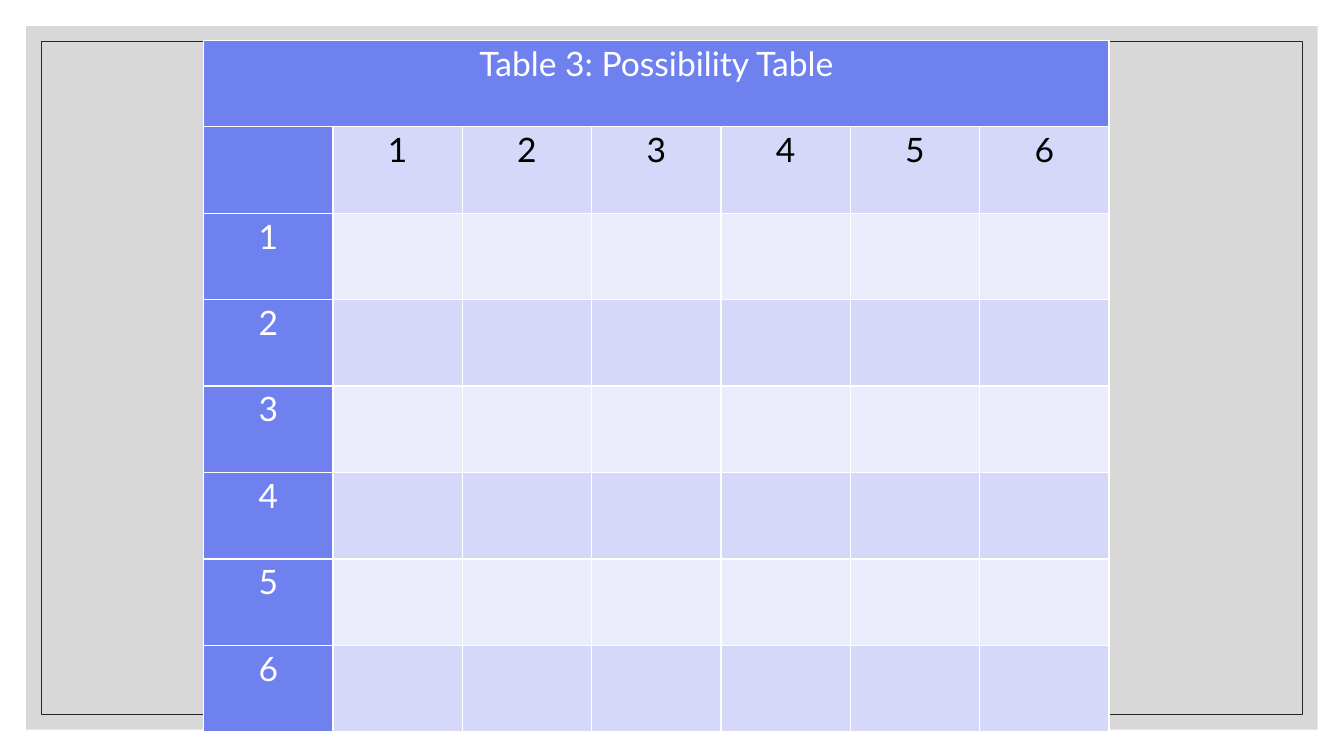
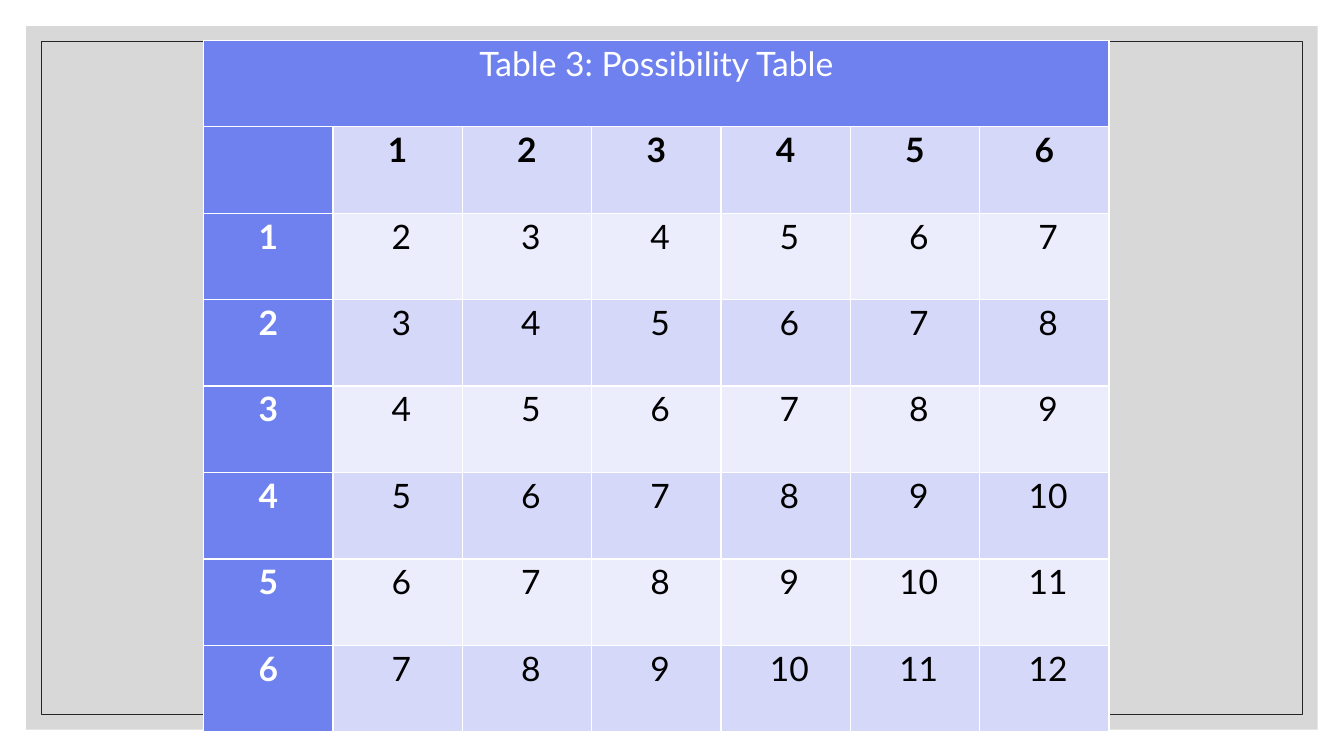
import pptx
import pptx.util
import pptx.dml.color
import pptx.enum.shapes
import pptx.enum.text
import pptx.oxml

Pt = pptx.util.Pt
RGBColor = pptx.dml.color.RGBColor

WHITE = RGBColor(0xFF, 0xFF, 0xFF)
BLACK = RGBColor(0x00, 0x00, 0x00)
BACKDROP_GRAY = RGBColor(0xBF, 0xBF, 0xBF)
OUTLINE_GRAY = RGBColor(0x26, 0x26, 0x26)
HEADER_BLUE = RGBColor(0x6E, 0x81, 0xEE)
BAND_DARK = RGBColor(0xD5, 0xD8, 0xF8)
BAND_LIGHT = RGBColor(0xEB, 0xED, 0xFC)

SLIDE_WIDTH, SLIDE_HEIGHT = 960, 540
BACKDROP_MARGIN = 18.72
OUTLINE_MARGIN = 29.5
TABLE_BOX = (145.44, 28.8, 646.8, 494)
FACES = range(1, 7)
TABLE_TITLE = "Table 3: Possibility Table"

FONT = {"name": "Lato", "size": Pt(24)}
PARAGRAPH = {"alignment": pptx.enum.text.PP_ALIGN.CENTER, "line_spacing": 1.07}
CELL_MARGINS = {"margin_left": Pt(5.04), "margin_right": Pt(5.04),
                "margin_top": 0, "margin_bottom": 0}
SUM_MARGINS = {**CELL_MARGINS, "margin_left": Pt(10.44)}
PLAIN_TABLE = {"first_row": False, "horz_banding": False}
DRAWING_NS = 'xmlns:a="http://schemas.openxmlformats.org/drawingml/2006/main"'


def apply_format(target, values):
    for attribute, value in values.items():
        setattr(target, attribute, value)


def add_frame_part(slide, margin):
    part = slide.shapes.add_shape(
        pptx.enum.shapes.MSO_SHAPE.RECTANGLE, Pt(margin), Pt(margin),
        Pt(SLIDE_WIDTH - 2 * margin), Pt(SLIDE_HEIGHT - 2 * margin))
    part.shadow.inherit = False
    return part


def add_frame(slide):
    backdrop = add_frame_part(slide, BACKDROP_MARGIN)
    backdrop.fill.solid()
    backdrop.fill.fore_color.rgb = BACKDROP_GRAY
    color = backdrop.element.spPr.find(".//{*}srgbClr")
    color.append(pptx.oxml.parse_xml(f'<a:alpha {DRAWING_NS} val="60000"/>'))
    backdrop.line.fill.background()

    outline = add_frame_part(slide, OUTLINE_MARGIN)
    outline.fill.background()
    outline.line.color.rgb = OUTLINE_GRAY
    outline.line.width = Pt(0.5)
    return backdrop, outline


def move_frame_to_layout(layout, frame):
    for placeholder in list(layout.placeholders):
        layout.shapes.element.remove(placeholder.element)
    for part in frame:
        layout.shapes.element.append(part.element)


def style_cell(cell, fill_color):
    properties = cell._tc.get_or_add_tcPr()
    for side in "LRTB":
        properties.append(pptx.oxml.parse_xml(
            f'<a:ln{side} {DRAWING_NS} w="{Pt(1)}"><a:solidFill>'
            f'<a:srgbClr val="{WHITE}"/></a:solidFill></a:ln{side}>'))
    cell.fill.solid()
    cell.fill.fore_color.rgb = fill_color


def write_cell(cell, text, color, bold=False, margins=CELL_MARGINS):
    apply_format(cell, margins)
    paragraph = cell.text_frame.paragraphs[0]
    apply_format(paragraph, PARAGRAPH)
    run = paragraph.add_run()
    run.text = str(text)
    apply_format(run.font, {**FONT, "bold": bold})
    run.font.color.rgb = color


def add_possibility_table(slide, box, solved):
    left, top, width, height = box
    row_count, column_count = len(FACES) + 2, len(FACES) + 1
    table = slide.shapes.add_table(
        row_count, column_count, Pt(left), Pt(top), Pt(width), Pt(height)).table
    apply_format(table, PLAIN_TABLE)
    for column in table.columns:
        column.width = Pt(width / column_count)
    for row in table.rows:
        row.height = Pt(height / row_count)

    for row in range(row_count):
        band = BAND_LIGHT if row % 2 == 0 else BAND_DARK
        for column in range(column_count):
            is_header = row == 0 or column == 0
            style_cell(table.cell(row, column), HEADER_BLUE if is_header else band)

    table.cell(0, 0).merge(table.cell(0, column_count - 1))
    write_cell(table.cell(0, 0), TABLE_TITLE, WHITE)
    for face in FACES:
        write_cell(table.cell(1, face), face, BLACK, solved)
        write_cell(table.cell(face + 1, 0), face, WHITE, solved)
        if solved:
            for other_face in FACES:
                write_cell(table.cell(face + 1, other_face), face + other_face,
                           BLACK, margins=SUM_MARGINS)


def main():
    presentation = pptx.Presentation()
    apply_format(presentation, {"slide_width": Pt(SLIDE_WIDTH),
                                "slide_height": Pt(SLIDE_HEIGHT)})
    layout = presentation.slide_layouts.get_by_name("Blank")
    question = presentation.slides.add_slide(layout)
    move_frame_to_layout(layout, add_frame(question))
    add_possibility_table(question, TABLE_BOX, solved=False)
    answer = presentation.slides.add_slide(layout)
    add_possibility_table(answer, TABLE_BOX, solved=True)
    presentation.save("out.pptx")


if __name__ == "__main__":
    main()
